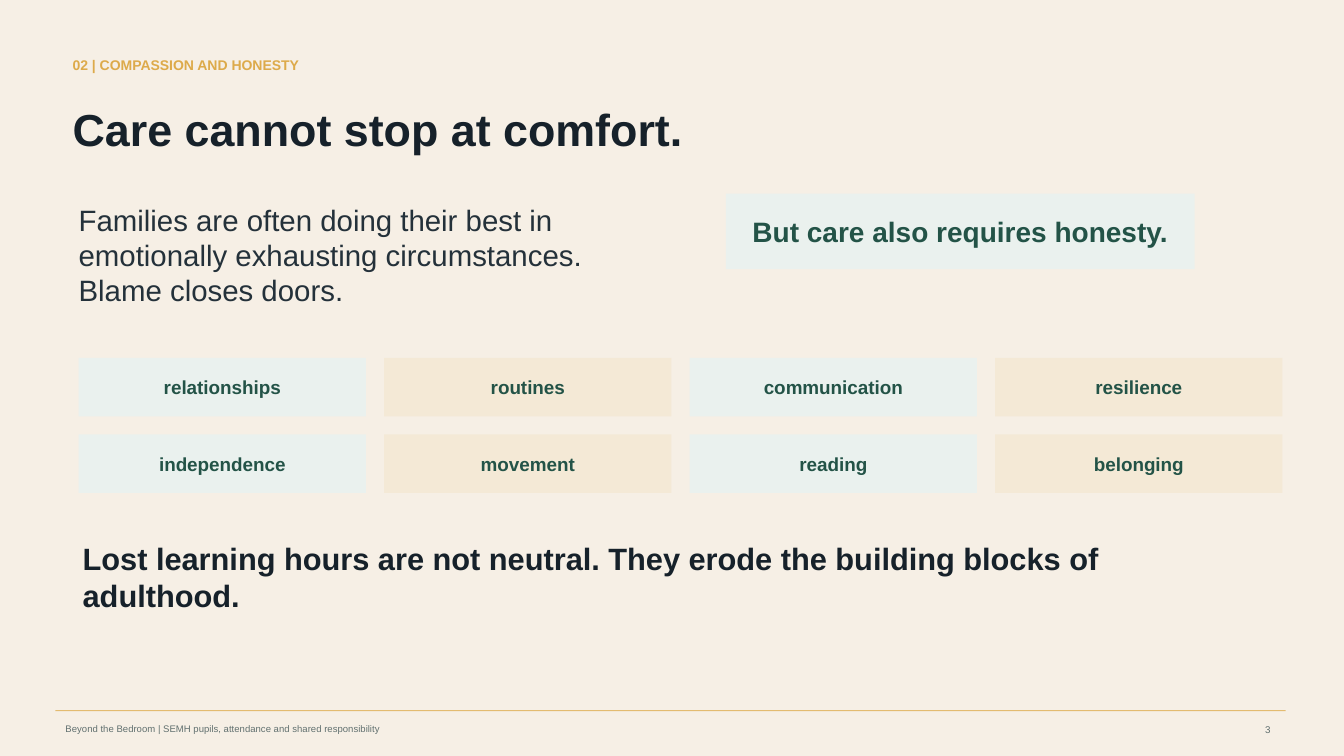
from lxml.etree import SubElement
from pptx import Presentation
from pptx.dml.color import RGBColor
from pptx.enum.shapes import MSO_CONNECTOR, MSO_SHAPE
from pptx.enum.text import MSO_ANCHOR, MSO_AUTO_SIZE, PP_ALIGN
from pptx.oxml.ns import qn
from pptx.util import Inches, Pt

COLORS = {
    "cream": "F6EFE5", "gold": "DDAA4A", "ink": "16212A", "slate": "24313A",
    "green": "235347", "mint": "EAF1EE", "sand": "F4E9D6", "grey": "61706F",
}
STYLES = {
    "section": {"size": 10, "bold": True, "color": "gold"},
    "title": {"size": 32, "bold": True, "color": "ink"},
    "body": {"size": 21, "bold": False, "color": "slate"},
    "callout": {"size": 20, "bold": True, "color": "green"},
    "tile": {"size": 13.5, "bold": True, "color": "green"},
    "closing": {"size": 22, "bold": True, "color": "ink"},
    "footer": {"size": 6.8, "bold": False, "color": "grey"},
    "number": {"size": 7, "bold": False, "color": "grey"},
}
COLUMNS, ROWS = 133.3, 75
BUILDING_BLOCKS = [
    ["relationships", "routines", "communication", "resilience"],
    ["independence", "movement", "reading", "belonging"],
]


def rgb(name):
    return RGBColor.from_string(COLORS[name])


class SlideBuilder:
    """Places styled elements; every length is in grid columns and rows."""

    def __init__(self, deck):
        self.column = deck.slide_width / COLUMNS
        self.row = deck.slide_height / ROWS
        self.slide = deck.slides.add_slide(deck.slide_layouts[5])
        background = self.slide.background.fill
        background.solid()
        background.fore_color.rgb = rgb("cream")

    def cells(self, x, y, width, height):
        """Turn grid units into slide lengths."""
        return (round(x * self.column), round(y * self.row),
                round(width * self.column), round(height * self.row))

    def set_text(self, shape, words, style, align=PP_ALIGN.LEFT,
                 anchor=MSO_ANCHOR.MIDDLE, inset=(0, 0)):
        frame = shape.text_frame
        side, end = (Inches(margin) for margin in inset)
        frame_format = {
            "word_wrap": True, "auto_size": MSO_AUTO_SIZE.NONE,
            "vertical_anchor": anchor, "margin_left": side,
            "margin_right": side, "margin_top": end, "margin_bottom": end,
        }
        for attribute, value in frame_format.items():
            setattr(frame, attribute, value)
        paragraph = frame.paragraphs[0]
        paragraph.alignment = align
        run = paragraph.add_run()
        run.text = words
        look = STYLES[style]
        font_format = {"name": "Arial", "size": Pt(look["size"]), "bold": look["bold"]}
        for attribute, value in font_format.items():
            setattr(run.font, attribute, value)
        run.font.color.rgb = rgb(look["color"])

    def title(self, words, *place):
        heading = self.slide.shapes.title
        heading.left, heading.top, heading.width, heading.height = self.cells(*place)
        self.set_text(heading, words, "title")

    def text(self, words, style, *place, **layout):
        self.set_text(self.slide.shapes.add_textbox(*self.cells(*place)),
                      words, style, **layout)

    def panel(self, words, style, color, *place):
        panel = self.slide.shapes.add_shape(MSO_SHAPE.RECTANGLE, *self.cells(*place))
        panel.shadow.inherit = False
        panel.fill.solid()
        panel.fill.fore_color.rgb = rgb(color)
        panel.line.fill.background()
        self.set_text(panel, words, style, align=PP_ALIGN.CENTER)

    def rule(self, x, y, width):
        left, top, length, _ = self.cells(x, y, width, 0)
        rule = self.slide.shapes.add_connector(
            MSO_CONNECTOR.STRAIGHT, left, top, left + length, top)
        rule.line.width = Pt(0.8)
        rule.line.color.rgb = rgb("gold")
        properties = rule._element.spPr
        SubElement(next(properties.iter(qn("a:srgbClr"))), qn("a:alpha"), val="75000")
        SubElement(properties, qn("a:effectLst"))

    def tiles(self, rows, x, y, width, height, gap):
        for row, labels in enumerate(rows):
            for column, label in enumerate(labels):
                self.panel(label, "tile", ("mint", "sand")[column % 2],
                           x + column * (width + gap), y + row * (height + gap),
                           width, height)


def main():
    deck = Presentation()
    deck.slide_width, deck.slide_height = Inches(13.33), Inches(7.5)
    page = SlideBuilder(deck)
    page.rule(5.5, 70.5, 122)
    page.text("Beyond the Bedroom | SEMH pupils, attendance and shared responsibility",
              "footer", 6.5, 71.3, 80, 2)
    page.text("02 | COMPASSION AND HONESTY", "section", 7.2, 5.2, 55, 2.5)
    page.title("Care cannot stop at comfort.", 7.2, 8.5, 69, 8.5)
    page.text("Families are often doing their best in emotionally exhausting "
              "circumstances. Blame closes doors.", "body", 7.8, 20, 54, 10.5)
    page.panel("But care also requires honesty.", "callout", "mint", 72, 19.2, 46.5, 7.5)
    page.tiles(BUILDING_BLOCKS, 7.8, 35.5, width=28.5, height=5.8, gap=1.8)
    page.text("Lost learning hours are not neutral. They erode the building blocks "
              "of adulthood.", "closing", 8.2, 54.5, 114, 5.5)
    page.text("3", "number", 124.5, 71.3, 8.7, 3.3,
              anchor=MSO_ANCHOR.TOP, inset=(0.1, 0.05))
    deck.save("out.pptx")


if __name__ == "__main__":
    main()
